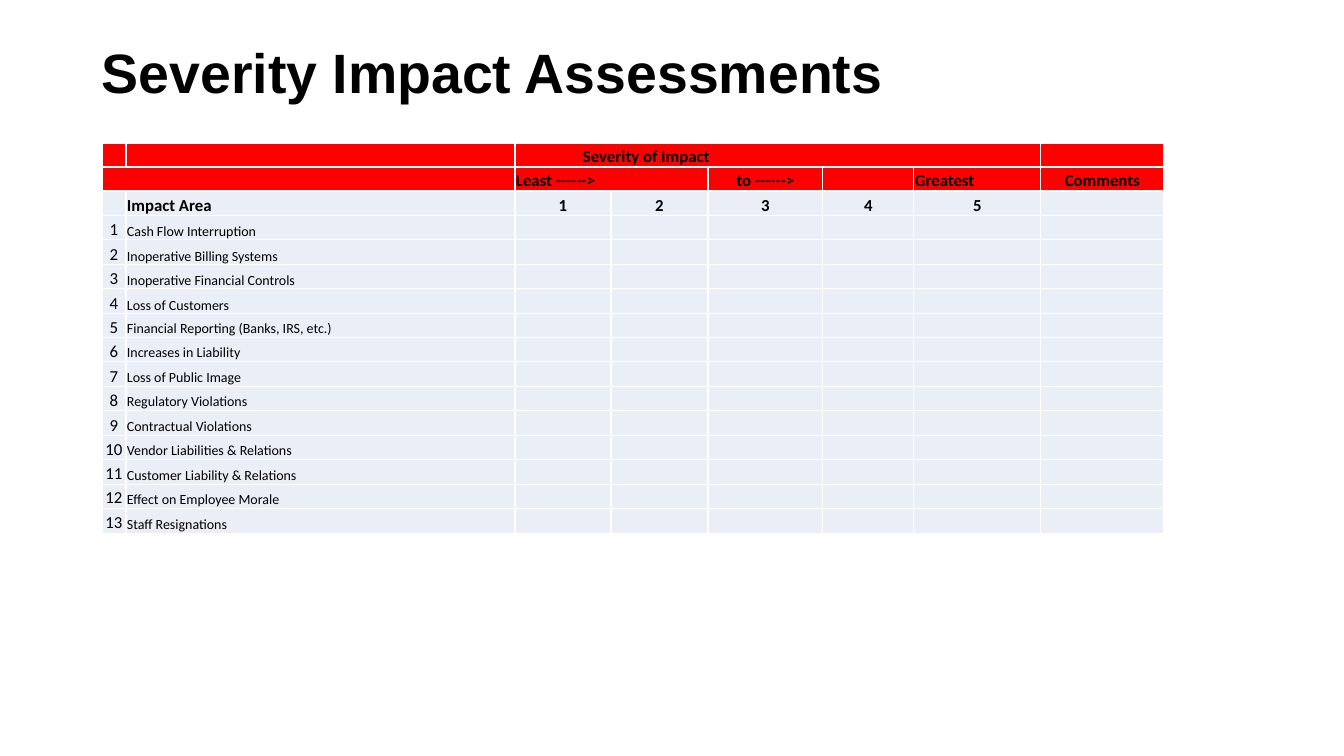
from lxml import etree
from pptx import Presentation
from pptx.dml.color import RGBColor
from pptx.enum.text import MSO_ANCHOR, PP_ALIGN
from pptx.oxml.ns import qn
from pptx.util import Emu, Pt

LEFT, CENTER = PP_ALIGN.LEFT, PP_ALIGN.CENTER
MIDDLE, BOTTOM = MSO_ANCHOR.MIDDLE, MSO_ANCHOR.BOTTOM
PX = 914400 / 100.8
THEME = {
    "ink": "000000", "header": "FF0000", "body": "EAEFF7", "border": "FFFFFF",
    "title_font": "Arial", "table_font": "Calibri",
    "title_size": 39.6, "label_size": 12, "area_size": 10,
}


def px(length):
    return Emu(round(length * PX))


def write(frame, text, font=THEME["table_font"], size=THEME["label_size"],
          bold=False, align=LEFT, spacing=1.0):
    paragraph = frame.paragraphs[0]
    paragraph.alignment = align
    paragraph.line_spacing = spacing
    run = paragraph.add_run()
    run.text = text
    run.font.name = font
    run.font.size = Pt(size)
    run.font.bold = bold
    run.font.color.rgb = RGBColor.from_string(THEME["ink"])


presentation = Presentation()
presentation.slide_width, presentation.slide_height = px(1344), px(756)
slide = presentation.slides.add_slide(presentation.slide_layouts[6])

# Title
title = slide.shapes.add_textbox(px(92), px(41), px(1159), px(70)).text_frame
title.word_wrap = True
title.vertical_anchor = MIDDLE
write(title, "Severity Impact Assessments", font=THEME["title_font"],
      size=THEME["title_size"], bold=True, spacing=0.9)

# Table content
impact_areas = [
    "Cash Flow Interruption", "Inoperative Billing Systems",
    "Inoperative Financial Controls", "Loss of Customers",
    "Financial Reporting (Banks, IRS, etc.)", "Increases in Liability",
    "Loss of Public Image", "Regulatory Violations", "Contractual Violations",
    "Vendor Liabilities & Relations", "Customer Liability & Relations",
    "Effect on Employee Morale", "Staff Resignations",
]
rows = [
    ["", "", "Severity of Impact", "", "", "", "", ""],
    ["", "", "Least ------>", "", "to ------>", "", "Greatest", "Comments"],
    ["", "Impact Area", "1", "2", "3", "4", "5", ""],
]
for number, area in enumerate(impact_areas, 1):
    rows.append([str(number), area] + [""] * 6)
column_widths = [24, 389, 96, 97, 115, 91, 127, 123]
table_height = 391
header_rows, heading_rows = 2, 3
left_aligned = {"Severity of Impact", "Least ------>", "Greatest"}

# Table grid
assessment = slide.shapes.add_table(
    len(rows), len(column_widths), px(102), px(143),
    px(sum(column_widths)), px(table_height)).table
assessment.first_row = False
assessment.horz_banding = False
for column, width in zip(assessment.columns, column_widths):
    column.width = px(width)
for r, row in enumerate(assessment.rows):
    row.height = px(table_height * (r + 1) // len(rows) - table_height * r // len(rows))

# Cells
for r, labels in enumerate(rows):
    for c, label in enumerate(labels):
        cell = assessment.cell(r, c)
        cell.vertical_anchor = BOTTOM
        cell.margin_left = cell.margin_right = cell.margin_top = px(1)
        cell.margin_bottom = 0
        cell.fill.solid()
        cell.fill.fore_color.rgb = RGBColor.from_string(
            THEME["header"] if r < header_rows else THEME["body"])
        if label:
            is_area = c == 1 and r >= heading_rows
            write(cell.text_frame, label, bold=r < heading_rows,
                  size=THEME["area_size"] if is_area else THEME["label_size"],
                  align=LEFT if c == 1 or label in left_aligned else CENTER)
        else:
            # A small end mark keeps empty cells from stretching the row
            end_mark = etree.SubElement(
                cell.text_frame.paragraphs[0]._p, qn("a:endParaRPr"))
            end_mark.set("sz", str(THEME["label_size"] * 100))
        # White cell borders
        properties = cell._tc.get_or_add_tcPr()
        for position, side in enumerate(("a:lnL", "a:lnR", "a:lnT", "a:lnB")):
            border = etree.Element(qn(side), w=str(Pt(1)))
            fill = etree.SubElement(border, qn("a:solidFill"))
            etree.SubElement(fill, qn("a:srgbClr"), val=THEME["border"])
            properties.insert(position, border)

# Merged headings
assessment.cell(0, 2).margin_left = px(68)
for r, first, last in [(0, 2, 6), (1, 0, 1), (1, 2, 3)]:
    assessment.cell(r, first).merge(assessment.cell(r, last))

presentation.save("out.pptx")
